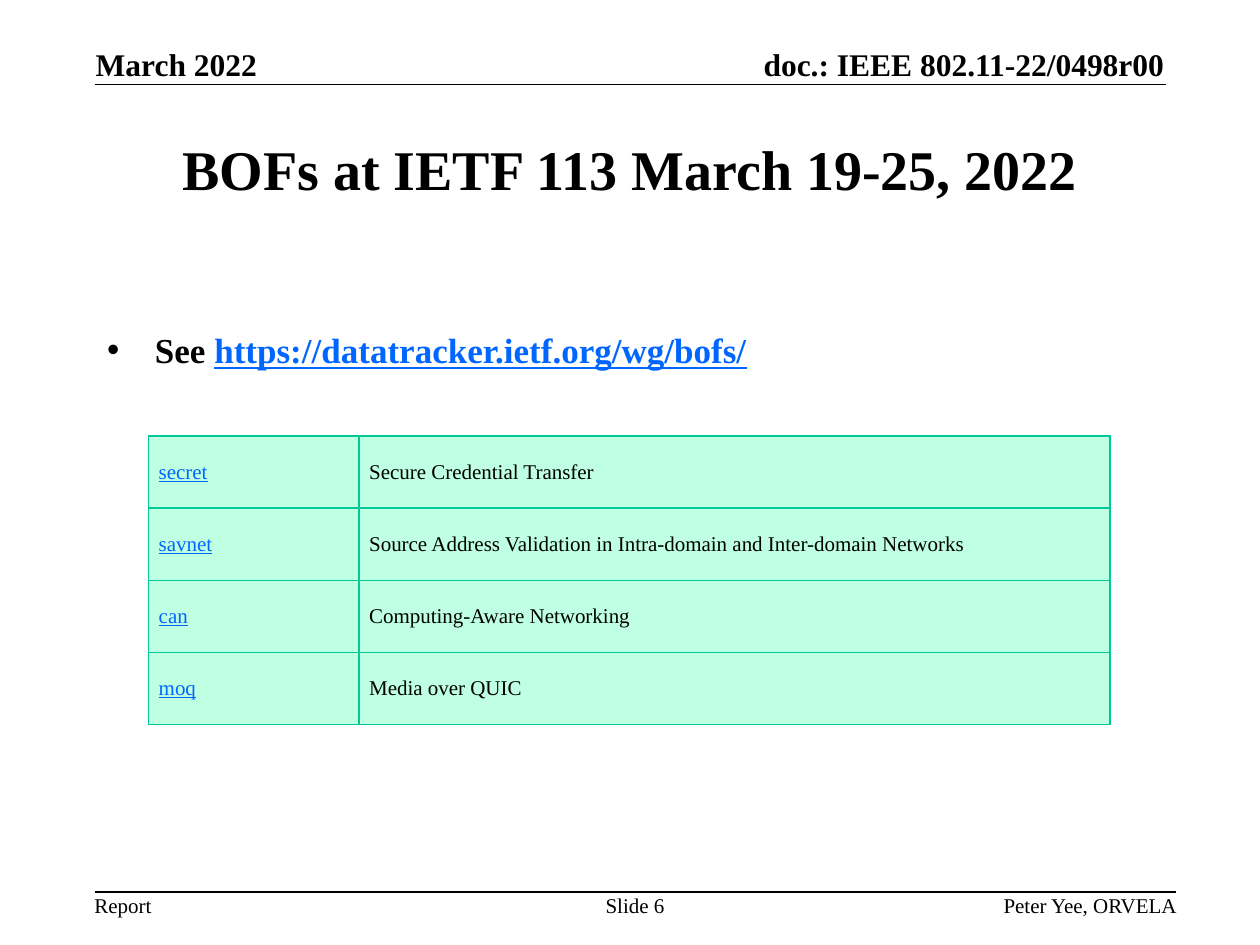
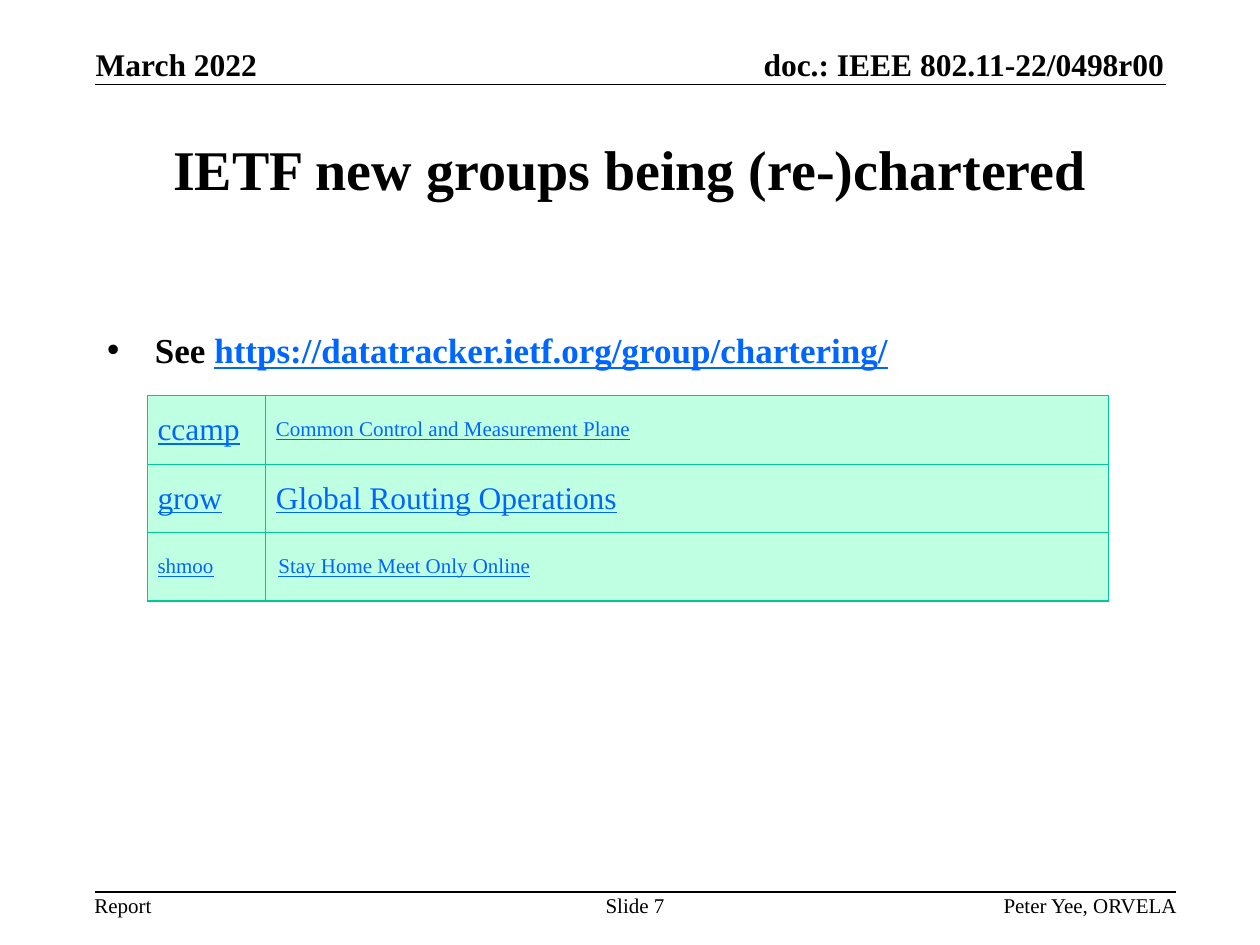
from dataclasses import dataclass

from lxml import etree
from pptx import Presentation
from pptx.dml.color import RGBColor
from pptx.enum.shapes import MSO_CONNECTOR
from pptx.enum.text import MSO_ANCHOR, MSO_AUTO_SIZE, PP_ALIGN
from pptx.oxml.ns import qn
from pptx.slide import Slide
from pptx.util import Emu, Pt

PX = 9144  # EMU in one px, 100 px to the inch
FONT = "Times New Roman"
BLACK = RGBColor(0x00, 0x00, 0x00)
WHITE = RGBColor(0xFF, 0xFF, 0xFF)
BLUE = RGBColor(0x00, 0x66, 0xFF)
MINT = RGBColor(0xBF, 0xFF, 0xE2)
GREEN = RGBColor(0x00, 0xC8, 0x96)
LEFT, CENTER, RIGHT = PP_ALIGN.LEFT, PP_ALIGN.CENTER, PP_ALIGN.RIGHT
TOP, MIDDLE, BOTTOM = MSO_ANCHOR.TOP, MSO_ANCHOR.MIDDLE, MSO_ANCHOR.BOTTOM
STRAIGHT = MSO_CONNECTOR.STRAIGHT
FIXED = MSO_AUTO_SIZE.NONE


@dataclass(frozen=True)
class Box:
    left: int
    top: int
    width: int
    height: int


@dataclass(frozen=True)
class Label:
    box: Box
    text: str
    size: int
    align: PP_ALIGN
    anchor: MSO_ANCHOR = TOP
    bold: bool = False


@dataclass(frozen=True)
class Rule:
    left: int
    right: int
    top: int


@dataclass(frozen=True)
class Cell:
    text: str
    link: bool = True
    size: int = 12
    inset: int = 8


@dataclass(frozen=True)
class Page:
    title: str
    link: str
    number: int
    grid: Box
    split: int
    rows: list[tuple[Cell, Cell]]


TITLE = Box(75, 75, 850, 117)
BODY = Box(75, 217, 850, 450)
LABELS = [
    Label(Box(552, 36, 372, 30), "doc.: IEEE 802.11-22/0498r00", 18, RIGHT, BOTTOM, True),
    Label(Box(76, 36, 207, 30), "March 2022", 18, LEFT, BOTTOM, True),
    Label(Box(75, 708, 46, 20), "Report", 12, LEFT),
    Label(Box(784, 708, 150, 20), "Peter Yee, ORVELA", 12, RIGHT),
]
RULES = [Rule(75, 925, 67), Rule(75, 933, 708)]
PAGES = [
    Page(
        "BOFs at IETF 113 March 19-25, 2022",
        "https://datatracker.ietf.org/wg/bofs/",
        6,
        Box(118, 346, 763, 229),
        167,
        [
            (Cell("secret"), Cell("Secure Credential Transfer", False)),
            (Cell("savnet"), Cell(
                "Source Address Validation in Intra-domain and Inter-domain Networks", False)),
            (Cell("can"), Cell("Computing-Aware Networking", False)),
            (Cell("moq"), Cell("Media over QUIC", False)),
        ],
    ),
    Page(
        "IETF new groups being (re-)chartered",
        "https://datatracker.ietf.org/group/chartering/",
        7,
        Box(117, 314, 763, 163),
        94,
        [
            (Cell("ccamp", size=18), Cell("Common Control and Measurement Plane")),
            (Cell("grow", size=18), Cell("Global Routing Operations", size=18)),
            (Cell("shmoo"), Cell("Stay Home Meet Only Online", inset=10)),
        ],
    ),
]


def px(count: float) -> Emu:
    return Emu(round(count * PX))


def span(box: Box) -> tuple[Emu, ...]:
    """Give left, top, width and height in EMU."""
    return px(box.left), px(box.top), px(box.width), px(box.height)


def place(shape, box: Box) -> None:
    shape.left, shape.top, shape.width, shape.height = span(box)


def pad(item, side: int, edge: int) -> None:
    """Set the insets of a text frame or a table cell."""
    item.margin_left = item.margin_right = px(side)
    item.margin_top = item.margin_bottom = px(edge)


def style(font, size: int, bold: bool = False, link: bool = False) -> None:
    font.name = FONT
    font.size = Pt(size)
    font.bold = bold
    font.underline = link
    font.color.rgb = BLUE if link else BLACK


def draw_label(slide: Slide, label: Label) -> None:
    frame = slide.shapes.add_textbox(*span(label.box)).text_frame
    frame.word_wrap = True
    frame.vertical_anchor = label.anchor
    pad(frame, 0, 0)
    frame.text = label.text
    par = frame.paragraphs[0]
    par.alignment = label.align
    style(par.runs[0].font, label.size, label.bold)


def draw_rule(slide: Slide, rule: Rule) -> None:
    line = slide.shapes.add_connector(
        STRAIGHT, px(rule.left), px(rule.top), px(rule.right), px(rule.top))
    line.line.color.rgb = BLACK
    line.line.width = Pt(1)
    etree.SubElement(line._element.spPr, qn("a:effectLst"))


def draw_title(slide: Slide, text: str) -> None:
    shape = slide.shapes.title
    place(shape, TITLE)
    frame = shape.text_frame
    frame.text = text
    frame.auto_size = FIXED
    frame.vertical_anchor = MIDDLE
    pad(frame, 10, 5)
    par = frame.paragraphs[0]
    par.alignment = CENTER
    style(par.runs[0].font, 32, bold=True)


def draw_body(slide: Slide, link: str) -> None:
    shape = slide.placeholders[1]
    place(shape, BODY)
    frame = shape.text_frame
    frame.auto_size = FIXED
    frame.vertical_anchor = TOP
    pad(frame, 10, 5)
    frame.margin_top = px(44)
    par = frame.paragraphs[0]
    props = par._p.get_or_add_pPr()
    props.set("marL", str(px(38)))
    props.set("indent", str(px(-38)))
    etree.SubElement(props, qn("a:buChar"), char="•")
    par.space_before = Pt(0)
    for text, linked in (("See ", False), (link, True)):
        run = par.add_run()
        run.text = text
        style(run.font, 20, bold=True, link=linked)


def draw_edges(cell) -> None:
    props = cell._tc.get_or_add_tcPr()
    for side in ("lnL", "lnR", "lnT", "lnB"):
        edge = etree.SubElement(props, qn(f"a:{side}"), w=str(Pt(0.75)))
        fill = etree.SubElement(edge, qn("a:solidFill"))
        etree.SubElement(fill, qn("a:srgbClr"), val=str(GREEN))


def fill_cell(cell, data: Cell) -> None:
    draw_edges(cell)
    cell.fill.solid()
    cell.fill.fore_color.rgb = MINT
    cell.vertical_anchor = MIDDLE
    pad(cell, data.inset, 4)
    cell.text_frame.text = data.text
    style(cell.text_frame.paragraphs[0].runs[0].font, data.size, link=data.link)


def draw_grid(slide: Slide, page: Page) -> None:
    count = len(page.rows)
    table = slide.shapes.add_table(count, 2, *span(page.grid)).table
    table.first_row = table.horz_banding = False
    table.columns[0].width = px(page.split)
    table.columns[1].width = px(page.grid.width - page.split)
    for r, cells in enumerate(page.rows):
        table.rows[r].height = px(page.grid.height / count)
        for c, data in enumerate(cells):
            fill_cell(table.cell(r, c), data)


def draw_page(deck, page: Page) -> None:
    slide = deck.slides.add_slide(deck.slide_layouts[1])
    slide.background.fill.solid()
    slide.background.fill.fore_color.rgb = WHITE
    number = Label(Box(475, 708, 58, 20), f"Slide {page.number}", 12, CENTER)
    for rule in RULES:
        draw_rule(slide, rule)
    for label in [*LABELS, number]:
        draw_label(slide, label)
    draw_title(slide, page.title)
    draw_body(slide, page.link)
    draw_grid(slide, page)


def main() -> None:
    deck = Presentation()
    deck.slide_width, deck.slide_height = px(1000), px(750)
    for page in PAGES:
        draw_page(deck, page)
    deck.save("out.pptx")


if __name__ == "__main__":
    main()
